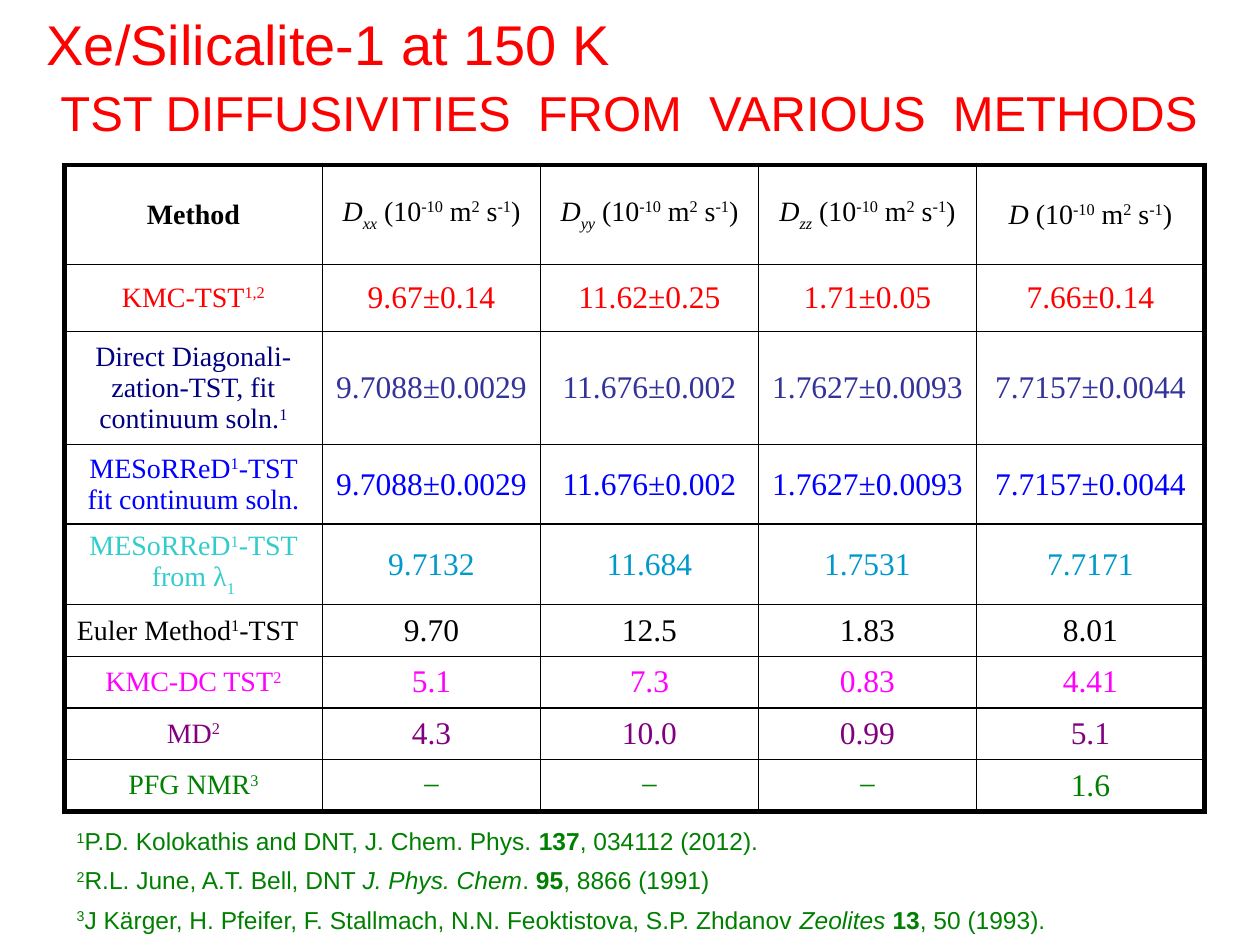
from dataclasses import dataclass

from lxml.etree import SubElement
from pptx import Presentation
from pptx.dml.color import RGBColor
from pptx.enum.text import MSO_ANCHOR as Anchor, PP_ALIGN as Align
from pptx.oxml.ns import qn
from pptx.util import Inches, Pt


@dataclass(frozen=True)
class Theme:
    sans: str = "Arial"
    serif: str = "Times New Roman"
    title_size: int = 32
    subtitle_size: int = 28
    label_size: int = 16
    value_size: int = 18
    reference_size: int = 14
    red: str = "FF0000"
    black: str = "000000"
    navy: str = "000080"
    indigo: str = "333399"
    blue: str = "0000FF"
    aqua: str = "33CCCC"
    teal: str = "0099CC"
    magenta: str = "FF00FF"
    purple: str = "800080"
    green: str = "008000"
    thin: int = 1
    thick: int = 3


THEME = Theme()
BASELINES = {"sup": "30000", "sub": "-30000", "isub": "-30000"}
FONT_FLAGS = {"i": {"italic": True}, "isub": {"italic": True}, "b": {"bold": True}}

# A run is plain text or a (text, style) pair
UNIT = [" (10", ("-10", "sup"), " m", ("2", "sup"), " s", ("-1", "sup"), ")"]
HEADER = [[("Method", "b")]]
HEADER += [[("D", "i"), (axis, "isub"), *UNIT] for axis in ("xx", "yy", "zz")]
HEADER += [[("D", "i"), *UNIT]]

# Label runs, label colour, value colour, values
METHODS = [
    (["KMC-TST", ("1,2", "sup")], THEME.red, THEME.red,
     ["9.67±0.14", "11.62±0.25", "1.71±0.05", "7.66±0.14"]),
    (["Direct Diagonali-zation-TST, fit continuum soln.", ("1", "sup")],
     THEME.navy, THEME.indigo,
     ["9.7088±0.0029", "11.676±0.002", "1.7627±0.0093", "7.7157±0.0044"]),
    (["MESoRReD", ("1", "sup"), "-TST fit continuum soln."], THEME.blue, THEME.blue,
     ["9.7088±0.0029", "11.676±0.002", "1.7627±0.0093", "7.7157±0.0044"]),
    (["MESoRReD", ("1", "sup"), "-TST from λ", ("1", "sub")], THEME.aqua, THEME.teal,
     ["9.7132", "11.684", "1.7531", "7.7171"]),
    (["Euler Method", ("1", "sup"), "-TST"], THEME.black, THEME.black,
     ["9.70", "12.5", "1.83", "8.01"]),
    (["KMC-DC TST", ("2", "sup")], THEME.magenta, THEME.magenta,
     ["5.1", "7.3", "0.83", "4.41"]),
    (["MD", ("2", "sup")], THEME.purple, THEME.purple,
     ["4.3", "10.0", "0.99", "5.1"]),
    (["PFG NMR", ("3", "sup")], THEME.green, THEME.green,
     ["−", "−", "−", "1.6"]),
]
LEFT_ALIGNED_ROW = 5
COLUMN_WIDTHS = [2.05, 1.73, 1.73, 1.73, 1.81]
ROW_HEIGHTS = [0.79, 0.53, 0.9, 0.63, 0.63, 0.41, 0.41, 0.41, 0.41]

REFERENCES = [
    [("1", "sup"), "P.D. Kolokathis and DNT, J. Chem. Phys. ", ("137", "b"),
     ", 034112 (2012)."],
    [("2", "sup"), "R.L. June, A.T. Bell, DNT ", ("J. Phys. Chem", "i"), ". ",
     ("95", "b"), ", 8866 (1991)"],
    [("3", "sup"), "J Kärger, H. Pfeifer, F. Stallmach, N.N. Feoktistova, S.P. Zhdanov ",
     ("Zeolites ", "i"), ("13", "b"), ", 50 (1993)."],
]


def write_runs(paragraph, runs, name, size, color, align=Align.LEFT):
    paragraph.alignment = align
    for item in runs:
        text, style = (item, "") if isinstance(item, str) else item
        run = paragraph.add_run()
        run.text = text
        font_format = {"name": name, "size": Pt(size), "bold": False, "italic": False}
        font_format.update(FONT_FLAGS.get(style, {}))
        for attribute, value in font_format.items():
            setattr(run.font, attribute, value)
        run.font.color.rgb = RGBColor.from_string(color)
        if style in BASELINES:
            run.font._element.set("baseline", BASELINES[style])


def set_borders(cell, widths):
    properties = cell._tc.get_or_add_tcPr()
    for side, width in widths.items():
        line = SubElement(properties, qn(f"a:ln{side}"), w=str(Pt(width)))
        fill = SubElement(line, qn("a:solidFill"))
        SubElement(fill, qn("a:srgbClr"), val=THEME.black)


def place_title(slide, left, top, width, height):
    title = slide.shapes.title
    box = {"left": left, "top": top, "width": width, "height": height}
    for attribute, value in box.items():
        setattr(title, attribute, Inches(value))
    frame = title.text_frame
    frame_format = {"word_wrap": True, "vertical_anchor": Anchor.BOTTOM,
                    "margin_left": 0, "margin_right": 0, "margin_bottom": 0}
    for attribute, value in frame_format.items():
        setattr(frame, attribute, value)
    lines = [("Xe/Silicalite-1 at 150 K", THEME.title_size, 0.37, 0),
             ("TST DIFFUSIVITIES  FROM  VARIOUS  METHODS", THEME.subtitle_size, 0.48, 3)]
    for index, (text, size, indent, gap) in enumerate(lines):
        paragraph = frame.add_paragraph() if index else frame.paragraphs[0]
        properties = paragraph._p.get_or_add_pPr()
        properties.set("marL", str(Inches(indent)))
        properties.set("indent", "0")
        paragraph.line_spacing = 1.0
        paragraph.space_before = Pt(gap)
        write_runs(paragraph, [text], THEME.sans, size, THEME.red)


def place_table(slide, left, top, width, height):
    row_count, column_count = len(ROW_HEIGHTS), len(COLUMN_WIDTHS)
    table = slide.shapes.add_table(
        row_count, column_count,
        Inches(left), Inches(top), Inches(width), Inches(height)).table
    table.first_row = table.horz_banding = False
    for column, column_width in zip(table.columns, COLUMN_WIDTHS):
        column.width = Inches(column_width)
    for row, row_height in zip(table.rows, ROW_HEIGHTS):
        row.height = Inches(row_height)

    # Text, size and colour of each cell
    rows = [[(runs, THEME.label_size, THEME.black) for runs in HEADER]]
    for label, label_color, value_color, values in METHODS:
        rows.append([(label, THEME.label_size, label_color)]
                    + [([value], THEME.value_size, value_color) for value in values])

    for r, row in enumerate(rows):
        for c, (runs, size, color) in enumerate(row):
            cell = table.cell(r, c)
            outer = {"L": c == 0, "R": c == column_count - 1,
                     "T": r == 0, "B": r == row_count - 1}
            set_borders(cell, {side: THEME.thick if edge else THEME.thin
                               for side, edge in outer.items()})
            cell.fill.background()
            cell.vertical_anchor = Anchor.MIDDLE
            is_left = r == LEFT_ALIGNED_ROW and c == 0
            write_runs(cell.text_frame.paragraphs[0], runs, THEME.serif, size, color,
                       Align.LEFT if is_left else Align.CENTER)


def place_references(slide, left, top, width, height, pitch):
    for index, runs in enumerate(REFERENCES):
        box = slide.shapes.add_textbox(Inches(left), Inches(top + index * pitch),
                                       Inches(width), Inches(height))
        box.text_frame.word_wrap = True
        write_runs(box.text_frame.paragraphs[0], runs, THEME.sans,
                   THEME.reference_size, THEME.green)


def main():
    presentation = Presentation()
    presentation.slide_width, presentation.slide_height = Inches(10), Inches(7.5)
    slide = presentation.slides.add_slide(presentation.slide_layouts[5])
    place_title(slide, 0, -0.03, 10, 1.15)
    place_table(slide, 0.51, 1.31, sum(COLUMN_WIDTHS), sum(ROW_HEIGHTS))
    place_references(slide, 0.51, 6.51, 9.06, 0.33, pitch=0.31)
    presentation.save("out.pptx")


if __name__ == "__main__":
    main()
